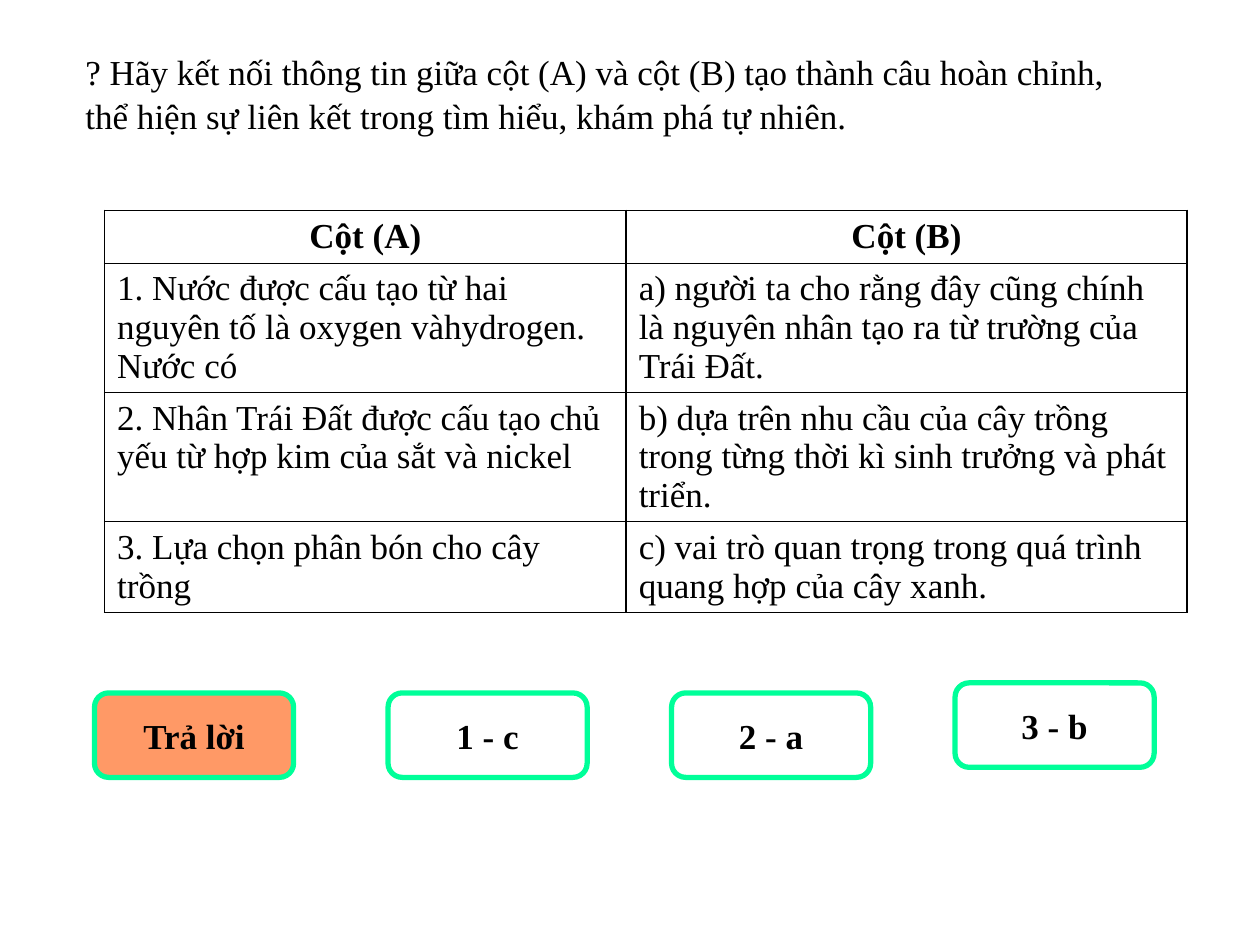
from lxml.etree import SubElement as Sub
from pptx import Presentation
from pptx.dml.color import RGBColor
from pptx.enum.shapes import MSO_SHAPE as Shape
from pptx.enum.text import MSO_ANCHOR as Anchor, PP_ALIGN as Align
from pptx.oxml.ns import qn
from pptx.util import Inches, Pt

BLACK = RGBColor(0x00, 0x00, 0x00)
WHITE = RGBColor(0xFF, 0xFF, 0xFF)
GREEN = RGBColor(0x00, 0xFF, 0x99)
CORAL = RGBColor(0xFF, 0x99, 0x66)
FONT = "Times New Roman"

TASK = (
    "? Hãy kết nối thông tin giữa cột (A) và cột (B) tạo thành câu hoàn chỉnh,",
    "thể hiện sự liên kết trong tìm hiểu, khám phá tự nhiên.",
)
ROWS = (
    (("Cột (A)",), ("Cột (B)",)),
    (
        ("1. Nước được cấu tạo từ hai", "nguyên tố là oxygen vàhydrogen.", "Nước có"),
        ("a) người ta cho rằng đây cũng chính", "là nguyên nhân tạo ra từ trường của",
         "Trái Đất."),
    ),
    (
        ("2. Nhân Trái Đất được cấu tạo chủ", "yếu từ hợp kim của sắt và nickel"),
        ("b) dựa trên nhu cầu của cây trồng", "trong từng thời kì sinh trưởng và phát",
         "triển."),
    ),
    (
        ("3. Lựa chọn phân bón cho cây", "trồng"),
        ("c) vai trò quan trọng trong quá trình", "quang hợp của cây xanh."),
    ),
)
WIDTHS = (4.14, 4.45)
HEIGHTS = (0.42, 1.02, 1.02, 0.72)
KEYS = (
    ("Trả lời", 0.75, 5.5, CORAL),
    ("1 - c", 3.08, 5.5, WHITE),
    ("2 - a", 5.33, 5.5, WHITE),
    ("3 - b", 7.58, 5.42, WHITE),
)


def write(frame, lines, bold=False, align=Align.LEFT, hang=0.38):
    """Write each line as a paragraph with a hanging indent."""
    for num, line in enumerate(lines):
        para = frame.add_paragraph() if num else frame.paragraphs[0]
        para.alignment = align
        if hang:
            props = para._p.get_or_add_pPr()
            props.set("marL", str(Inches(hang)))
            props.set("indent", str(-Inches(hang)))
        run = para.add_run()
        run.text = line
        font = run.font
        font.name, font.size, font.bold = FONT, Pt(20), bold
        font.color.rgb = BLACK


def add_task(slide):
    """Add the question above the table."""
    box = slide.shapes.add_textbox(Inches(0.58), Inches(0.42), Inches(8.58), Inches(0.83))
    frame = box.text_frame
    frame.word_wrap = True
    write(frame, TASK)
    for para in frame.paragraphs:
        para.line_spacing = 0.8
        para.space_before = Pt(5.5)


def edge(cell):
    """Draw a thin black border on all sides of a cell."""
    props = cell._tc.get_or_add_tcPr()
    for num, side in enumerate(("lnL", "lnR", "lnT", "lnB")):
        line = props.makeelement(qn(f"a:{side}"), {"w": str(Pt(1))})
        fill = Sub(line, qn("a:solidFill"))
        Sub(fill, qn("a:srgbClr"), val=str(BLACK))
        props.insert(num, line)


def add_grid(slide):
    """Add the table with the two columns to be matched."""
    table = slide.shapes.add_table(
        len(ROWS), len(WIDTHS), Inches(0.83), Inches(1.67),
        Inches(sum(WIDTHS)), Inches(sum(HEIGHTS)),
    ).table
    for col, width in zip(table.columns, WIDTHS):
        col.width = Inches(width)
    for y, (row, high) in enumerate(zip(ROWS, HEIGHTS)):
        table.rows[y].height = Inches(high)
        head = y == 0
        for x, lines in enumerate(row):
            cell = table.cell(y, x)
            cell.fill.background()
            edge(cell)
            hang = 0.58 if (y, x) == (1, 0) else 0.38
            write(cell.text_frame, lines, head, Align.CENTER if head else Align.LEFT, hang)


def add_key(slide, text, left, top, fill):
    """Add a rounded box with an answer."""
    box = slide.shapes.add_shape(
        Shape.FLOWCHART_ALTERNATE_PROCESS,
        Inches(left), Inches(top), Inches(1.58), Inches(0.67),
    )
    box.shadow.inherit = False
    box.fill.solid()
    box.fill.fore_color.rgb = fill
    box.line.color.rgb = GREEN
    box.line.width = Pt(3)
    frame = box.text_frame
    frame.word_wrap = False
    frame.vertical_anchor = Anchor.MIDDLE
    write(frame, (text,), True, Align.CENTER, 0)


def main():
    """Build the slide and save it."""
    deck = Presentation()
    deck.slide_width, deck.slide_height = Inches(10), Inches(7.5)
    slide = deck.slides.add_slide(deck.slide_layouts[6])
    add_grid(slide)
    add_task(slide)
    for key in KEYS:
        add_key(slide, *key)
    deck.save("out.pptx")


if __name__ == "__main__":
    main()
